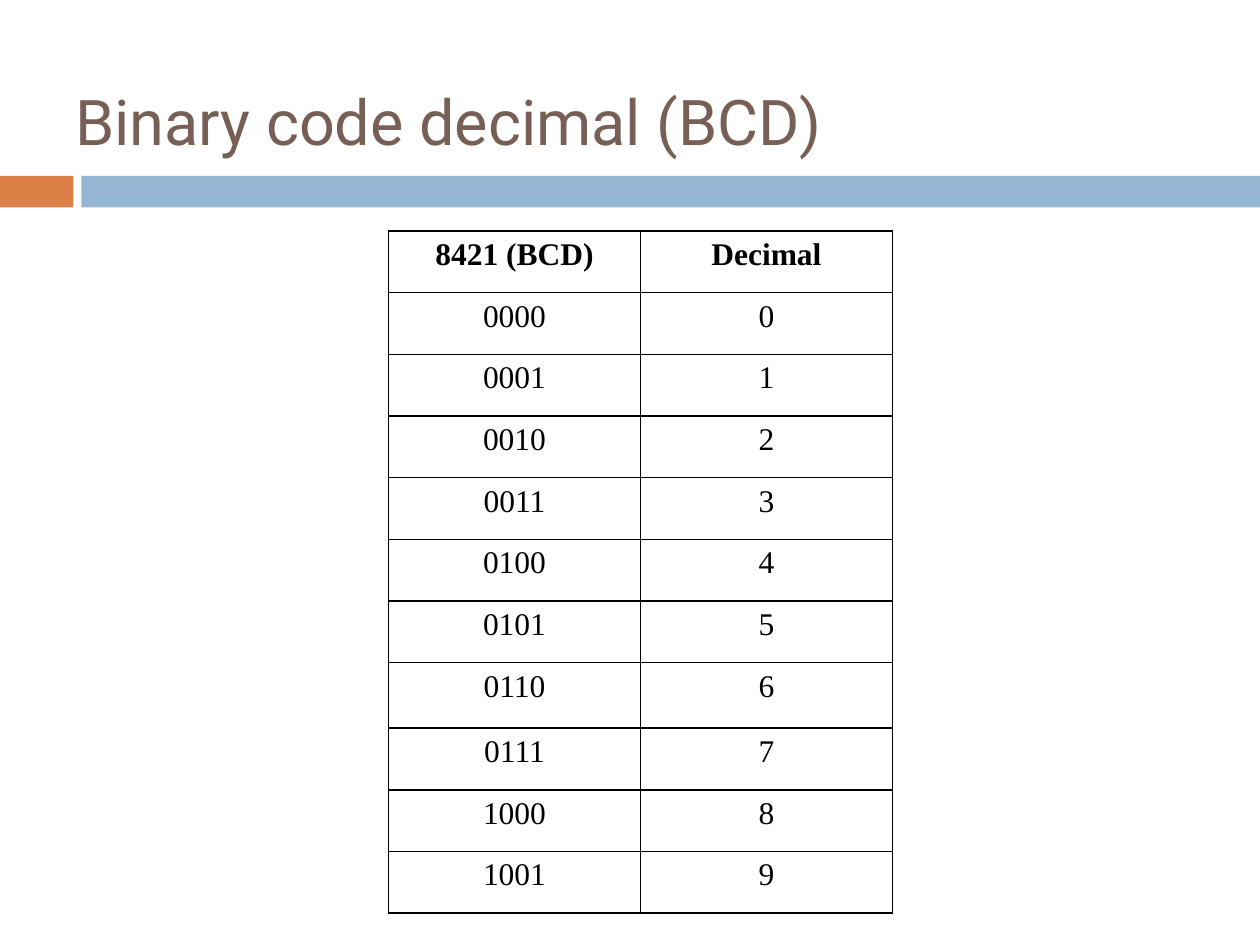
from lxml import etree
from pptx import Presentation
from pptx import util as u
from pptx.dml.color import RGBColor
from pptx.enum import shapes, text
from pptx.oxml.ns import qn

PX = 9525  # EMU per px, 96 px to the inch
WIDTH, HEIGHT = 960, 720

ORANGE = RGBColor(0xDD, 0x80, 0x47)
BLUE = RGBColor(0x94, 0xB6, 0xD2)
BROWN = RGBColor(0x77, 0x5F, 0x55)
BLACK = RGBColor(0, 0, 0)

HEADERS = ("8421 (BCD)", "Decimal")
COL_WIDTH, ROW_HEIGHT, TALL_ROW, TALL_HEIGHT = 192, 47, 7, 50
HANGING = 36


def px(n):
    return u.Emu(n * PX)


def add_run(p, words, font, size, color, bold=False):
    r = p.add_run()
    r.text = words
    r.font.name = font
    r.font.size = u.Pt(size)
    r.font.bold = bold
    r.font.color.rgb = color


def add_bar(slide, left, width, color):
    sp = slide.shapes.add_shape(shapes.MSO_SHAPE.RECTANGLE,
                                px(left), px(134), px(width), px(24))
    sp.shadow.inherit = False
    sp.fill.solid()
    sp.fill.fore_color.rgb = color
    sp.line.fill.background()


def add_title(slide, words):
    sp = slide.shapes.add_textbox(px(48), px(32), px(864), px(120))
    tf = sp.text_frame
    tf.word_wrap = True
    tf.vertical_anchor = text.MSO_ANCHOR.MIDDLE
    add_run(tf.paragraphs[0], words, "Roboto", 36, BROWN)


def set_borders(cell):
    # Borders come before the fill in the cell properties
    tc_pr = cell._tc.get_or_add_tcPr()
    for i, side in enumerate(("lnL", "lnR", "lnT", "lnB")):
        ln = etree.Element(qn(f"a:{side}"), w=str(u.Pt(1)))
        fill = etree.SubElement(ln, qn("a:solidFill"))
        etree.SubElement(fill, qn("a:srgbClr"), val=str(BLACK))
        tc_pr.insert(i, ln)


def fill_cell(cell, words, bold):
    cell.fill.background()
    set_borders(cell)
    p = cell.text_frame.paragraphs[0]
    p.alignment = text.PP_ALIGN.CENTER
    p_pr = p._p.get_or_add_pPr()
    p_pr.set("marL", str(px(HANGING)))
    p_pr.set("indent", str(-px(HANGING)))
    add_run(p, words, "Times New Roman", 18, BLACK, bold)


def add_code_table(slide):
    rows = [HEADERS] + [(f"{n:04b}", str(n)) for n in range(10)]
    heights = [TALL_HEIGHT if i == TALL_ROW else ROW_HEIGHT
               for i in range(len(rows))]
    frame = slide.shapes.add_table(len(rows), len(HEADERS), px(296), px(176),
                                   px(COL_WIDTH * len(HEADERS)),
                                   px(sum(heights)))
    table = frame.table
    table.horz_banding = False
    for col in table.columns:
        col.width = px(COL_WIDTH)
    for i, values in enumerate(rows):
        table.rows[i].height = px(heights[i])
        for j, words in enumerate(values):
            fill_cell(table.cell(i, j), words, bold=i == 0)


def main():
    prs = Presentation()
    prs.slide_width, prs.slide_height = px(WIDTH), px(HEIGHT)
    slide = prs.slides.add_slide(prs.slide_layouts[6])

    # Band under the title
    add_bar(slide, 0, 56, ORANGE)
    add_bar(slide, 62, WIDTH - 62, BLUE)

    # Title and code table
    add_title(slide, "Binary code decimal (BCD)")
    add_code_table(slide)

    prs.save("out.pptx")


if __name__ == "__main__":
    main()
